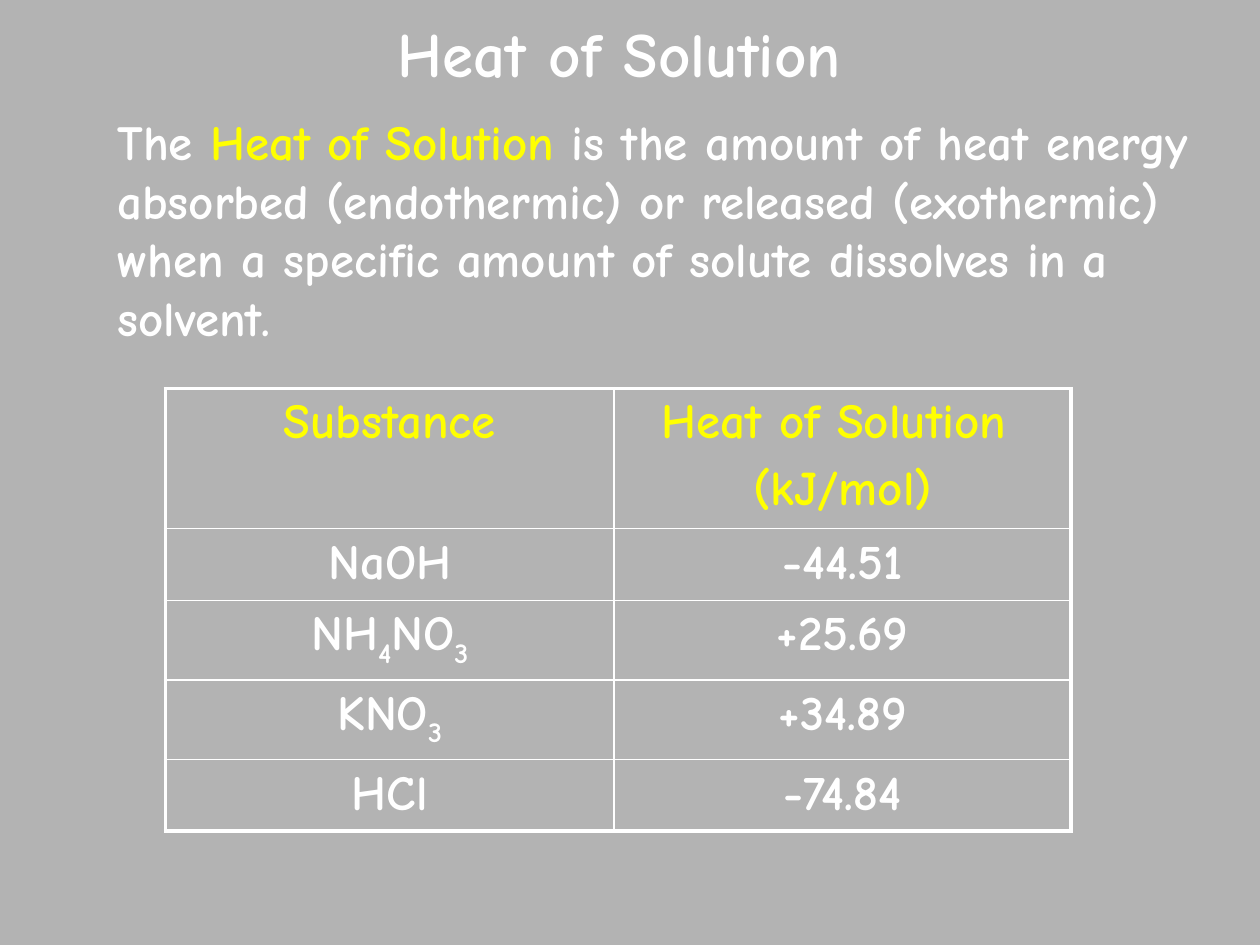
import pptx
import pptx.util
import pptx.dml.color
import pptx.enum.text
import pptx.oxml.ns
import lxml.etree

Pt = pptx.util.Pt
RGB = pptx.dml.color.RGBColor
ALIGN = pptx.enum.text.PP_ALIGN
ANCHOR = pptx.enum.text.MSO_ANCHOR
qn = pptx.oxml.ns.qn

GRAY = RGB(0xB3, 0xB3, 0xB3)
WHITE = RGB(0xFF, 0xFF, 0xFF)
YELLOW = RGB(0xFF, 0xFF, 0x00)

THICK, THIN = 2.25, 1

# Digits after an underscore are subscripts.
ROWS = [
    ("Substance", "Heat of Solution \n(kJ/mol)"),
    ("NaOH", "-44.51"),
    ("NH_4NO_3", "+25.69"),
    ("KNO_3", "+34.89"),
    ("HCl", "-74.84"),
]
WIDTHS = [256.5, 261]
HEIGHTS = [80, 41, 45.5, 45.5, 40.5]


class Deck:
    face = "Comic Neue"
    size = 28

    def __init__(self):
        self.prs = pptx.Presentation()
        self.prs.slide_width, self.prs.slide_height = Pt(720), Pt(540)
        self.slide = self.prs.slides.add_slide(self.prs.slide_layouts[5])
        fill = self.slide.background.fill
        fill.solid()
        fill.fore_color.rgb = GRAY

    def style(self, para, color, size=None, align=ALIGN.LEFT):
        para.alignment = align
        font = para.font
        font.name, font.bold = self.face, True
        font.size = Pt(size or self.size)
        font.color.rgb = color

    def title(self, text, x, y, w, h):
        shape = self.slide.shapes.title
        shape.left, shape.top, shape.width, shape.height = map(Pt, (x, y, w, h))
        frame = shape.text_frame
        frame.text = text
        frame.vertical_anchor = ANCHOR.MIDDLE
        self.style(frame.paragraphs[0], WHITE, 36, ALIGN.CENTER)

    def body(self, parts, x, y, w, h):
        """Add a text box from (text, colour) parts."""
        box = self.slide.shapes.add_textbox(*map(Pt, (x, y, w, h)))
        frame = box.text_frame
        frame.word_wrap = True
        frame.auto_size = pptx.enum.text.MSO_AUTO_SIZE.SHAPE_TO_FIT_TEXT
        para = frame.paragraphs[0]
        self.style(para, WHITE)
        for text, color in parts:
            run = para.add_run()
            run.text = text
            run.font.color.rgb = color

    def table(self, rows, x, y, widths, heights):
        frame = self.slide.shapes.add_table(
            len(rows), len(widths),
            *map(Pt, (x, y, sum(widths), sum(heights))))
        table = frame.table
        table.first_row = table.horz_banding = False
        for col, width in zip(table.columns, widths):
            col.width = Pt(width)
        for row, height in zip(table.rows, heights):
            row.height = Pt(height)
        for r, row in enumerate(rows):
            for c, text in enumerate(row):
                cell = table.cell(r, c)
                self.cell(cell, text, WHITE if r else YELLOW)
                outer = {"L": c == 0, "R": c == len(widths) - 1,
                         "T": r == 0, "B": r == len(rows) - 1}
                self.edges(cell, outer)

    def cell(self, cell, text, color):
        cell.text = text.replace("_", "")
        for para, line in zip(cell.text_frame.paragraphs, text.split("\n")):
            self.style(para, color, align=ALIGN.CENTER)
            para.space_before = Pt(self.size * 0.2)
            if "_" in line:
                self.formula(para, line)

    def formula(self, para, text):
        """Rebuild the runs, lowering each digit that follows an underscore."""
        para.clear()
        head, *tails = text.split("_")
        para.add_run().text = head
        for tail in tails:
            low = para.add_run()
            low.text = tail[0]
            low._r.get_or_add_rPr().set("baseline", "-25000")
            if tail[1:]:
                para.add_run().text = tail[1:]

    def edges(self, cell, outer):
        """Draw cell borders, thick on the outer sides of the table."""
        props = cell._tc.get_or_add_tcPr()
        for side, thick in outer.items():
            line = lxml.etree.SubElement(props, qn("a:ln" + side))
            line.set("w", str(Pt(THICK if thick else THIN)))
            fill = lxml.etree.SubElement(line, qn("a:solidFill"))
            lxml.etree.SubElement(fill, qn("a:srgbClr")).set("val", str(WHITE))
        cell.fill.background()


def main():
    deck = Deck()
    deck.title("Heat of Solution", 156, 0, 396, 60)
    deck.body([
        ("The ", WHITE),
        ("Heat of Solution", YELLOW),
        (" is the amount of heat energy absorbed (endothermic) or released "
         "(exothermic) when a specific amount of solute dissolves in a "
         "solvent.", WHITE),
    ], 60, 60, 630, 142)
    deck.table(ROWS, 94.5, 222, WIDTHS, HEIGHTS)
    deck.prs.save("out.pptx")


if __name__ == "__main__":
    main()
